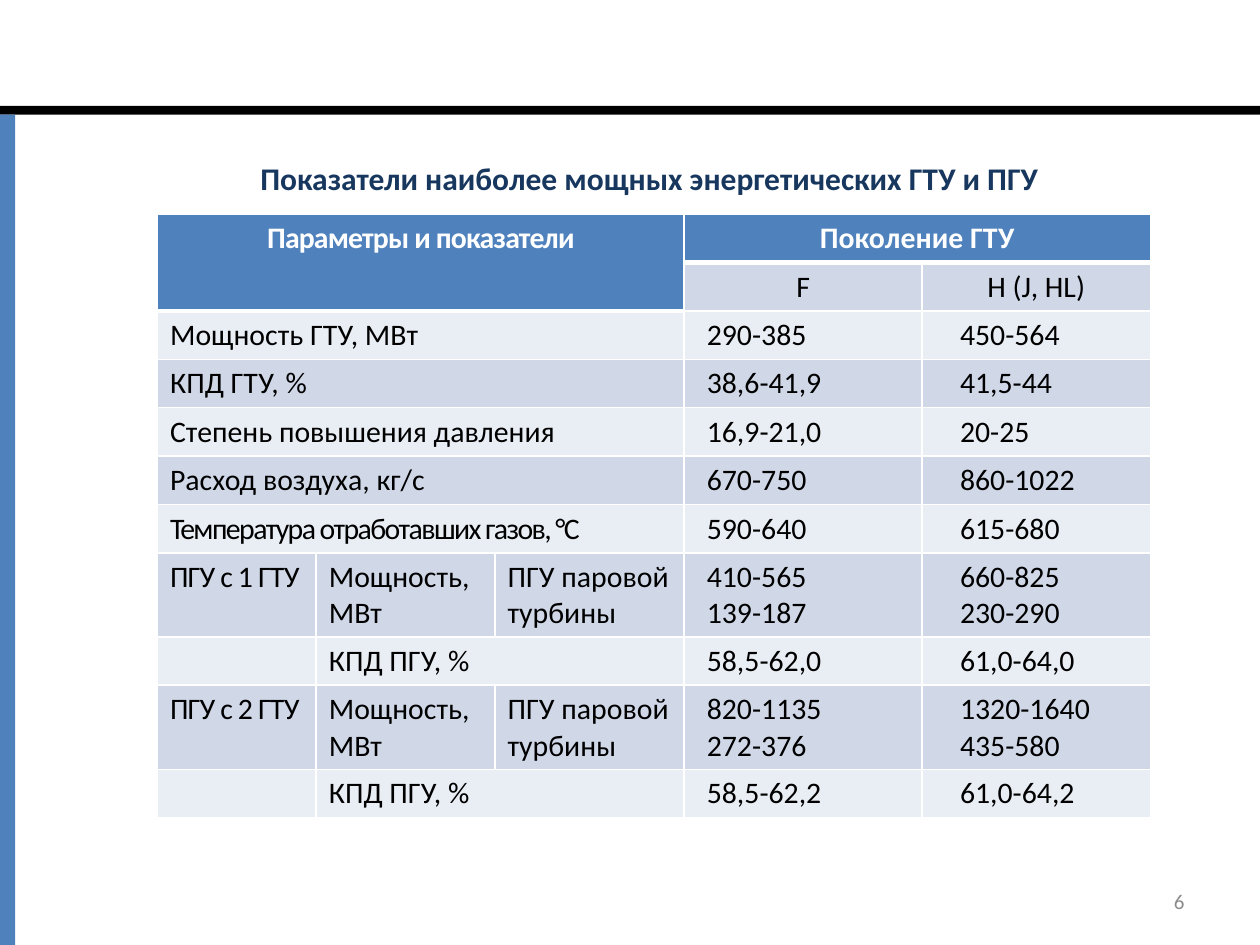
"""Build the slide that compares the most powerful gas turbine and combined-cycle units."""
import pptx
import pptx.dml.color
import pptx.enum.shapes
import pptx.enum.text
import pptx.oxml.ns
import pptx.util
from lxml import etree
from pptx.util import Inches

RGBColor = pptx.dml.color.RGBColor
ALIGN = pptx.enum.text.PP_ALIGN
ANCHOR = pptx.enum.text.MSO_ANCHOR

BLACK = RGBColor(0x00, 0x00, 0x00)
WHITE = RGBColor(0xFF, 0xFF, 0xFF)
BLUE = RGBColor(0x4F, 0x81, 0xBD)
NAVY = RGBColor(0x17, 0x37, 0x5E)
GRAY = RGBColor(0x8C, 0x8C, 0x8C)
DARK_BAND = RGBColor(0xD0, 0xD8, 0xE8)
LIGHT_BAND = RGBColor(0xE9, 0xED, 0xF4)

COLUMN_WIDTHS = (1.26, 1.42, 1.5, 1.89, 1.81)
ROW_HEIGHT = 0.38
TALL_ROW_HEIGHT = 0.66
F_COLUMN, H_COLUMN = 3, 4
VALUE_INDENTS = {F_COLUMN: 0.08, H_COLUMN: 0.2}

UNIT_CELLS = ("Мощность, МВт", "ПГУ паровой турбины")
ROWS = (
    (("Мощность ГТУ, МВт",), "290-385", "450-564"),
    (("КПД ГТУ, %",), "38,6-41,9", "41,5-44"),
    (("Степень повышения давления",), "16,9-21,0", "20-25"),
    (("Расход воздуха, кг/с",), "670-750", "860-1022"),
    (("Температура отработавших газов, °С",), "590-640", "615-680"),
    (("ПГУ с 1 ГТУ", *UNIT_CELLS), "410-565\n139-187", "660-825\n230-290"),
    (("", "КПД ПГУ, %"), "58,5-62,0", "61,0-64,0"),
    (("ПГУ с 2 ГТУ", *UNIT_CELLS), "820-1135\n272-376", "1320-1640\n435-580"),
    (("", "КПД ПГУ, %"), "58,5-62,2", "61,0-64,2"),
)
LETTER_SPACING = {
    "Параметры и показатели": -0.5,
    "Температура отработавших газов, °С": -0.9,
    "ПГУ с 1 ГТУ": -0.5,
    "ПГУ с 2 ГТУ": -0.5,
}


def style_paragraph(para, size, color, bold=False, align=ALIGN.LEFT):
    """Set the font and alignment of a paragraph."""
    para.alignment = align
    para.font.name = "Calibri"
    para.font.size = pptx.util.Pt(size)
    para.font.bold = bold
    para.font.color.rgb = color


def add_bar(page, left, top, width, height, color):
    """Add a plain rectangle."""
    bar = page.shapes.add_shape(
        pptx.enum.shapes.MSO_SHAPE.RECTANGLE,
        Inches(left), Inches(top), Inches(width), Inches(height))
    bar.shadow.inherit = False
    bar.fill.solid()
    bar.fill.fore_color.rgb = color
    bar.line.fill.background()


def add_text(page, left, top, width, height, text, **style):
    """Add a one-paragraph text box centred vertically and return the paragraph."""
    box = page.shapes.add_textbox(Inches(left), Inches(top), Inches(width), Inches(height))
    box.text_frame.word_wrap = True
    box.text_frame.vertical_anchor = ANCHOR.MIDDLE
    para = box.text_frame.paragraphs[0]
    para.text = text
    style_paragraph(para, **style)
    return para


def set_borders(cell, bottom_width):
    """Draw white borders around a cell, with a chosen width below."""
    properties = cell._tc.get_or_add_tcPr()
    widths = {"a:lnL": 1, "a:lnR": 1, "a:lnT": 1, "a:lnB": bottom_width}
    for index, (tag, width) in enumerate(widths.items()):
        line = etree.Element(pptx.oxml.ns.qn(tag), w=str(pptx.util.Pt(width)))
        fill = etree.SubElement(line, pptx.oxml.ns.qn("a:solidFill"))
        etree.SubElement(fill, pptx.oxml.ns.qn("a:srgbClr"), val=str(WHITE))
        properties.insert(index, line)


def fill_cell(cell, text, fill, color=BLACK, bold=False, align=ALIGN.LEFT, indent=0):
    """Write a table cell, one paragraph for each line of text."""
    cell.fill.solid()
    cell.fill.fore_color.rgb = fill
    cell.text = text
    for para in cell.text_frame.paragraphs:
        style_paragraph(para, 17, color, bold, align)
        if indent:
            para._p.get_or_add_pPr().set("indent", str(Inches(indent)))
        for span in para.runs:
            if text in LETTER_SPACING:
                span.font._element.set("spc", str(round(LETTER_SPACING[text] * 100)))


def add_header(table):
    """Fill the two header rows."""
    header = {"fill": BLUE, "color": WHITE, "bold": True, "align": ALIGN.CENTER}
    table.cell(0, 0).merge(table.cell(1, 2))
    table.cell(0, F_COLUMN).merge(table.cell(0, H_COLUMN))
    fill_cell(table.cell(0, 0), "Параметры и показатели", **header)
    fill_cell(table.cell(0, F_COLUMN), "Поколение ГТУ", **header)
    fill_cell(table.cell(1, F_COLUMN), "F", DARK_BAND, align=ALIGN.CENTER)
    fill_cell(table.cell(1, H_COLUMN), "H (J, HL)", DARK_BAND, align=ALIGN.CENTER)


def add_body_row(table, row, labels, values):
    """Fill one body row, stretching its last label up to the value columns."""
    fill = DARK_BAND if row % 2 else LIGHT_BAND
    last = len(labels) - 1
    if last < F_COLUMN - 1:
        table.cell(row, last).merge(table.cell(row, F_COLUMN - 1))
    for column, label in enumerate(labels):
        fill_cell(table.cell(row, column), label, fill)
    for (column, indent), value in zip(VALUE_INDENTS.items(), values):
        fill_cell(table.cell(row, column), value, fill, indent=indent)


def add_indicator_table(page):
    """Add the table of turbine indicators."""
    heights = [ROW_HEIGHT] * 2 + [
        TALL_ROW_HEIGHT if "\n" in f_value else ROW_HEIGHT for _, f_value, _ in ROWS]
    frame = page.shapes.add_table(
        len(heights), len(COLUMN_WIDTHS), Inches(1.25), Inches(1.7),
        Inches(sum(COLUMN_WIDTHS)), Inches(sum(heights)))
    table = frame.table
    for column, width in zip(table.columns, COLUMN_WIDTHS):
        column.width = Inches(width)
    for row, height in zip(table.rows, heights):
        row.height = Inches(height)
    add_header(table)
    for row, (labels, *values) in enumerate(ROWS, start=2):
        add_body_row(table, row, labels, values)
    for row in range(len(heights)):
        for column in range(len(COLUMN_WIDTHS)):
            is_header = row == 0 or (row == 1 and column < F_COLUMN)
            set_borders(table.cell(row, column), 3 if is_header else 1)


def main():
    """Build and save the deck."""
    deck = pptx.Presentation()
    deck.slide_width, deck.slide_height = Inches(10), Inches(7.5)
    page = deck.slides.add_slide(deck.slide_layouts[6])
    add_bar(page, 0, 0.84, 10, 0.07, BLACK)
    add_bar(page, 0, 0.91, 0.12, 6.59, BLUE)
    title = add_text(page, 1.22, 1.26, 7.87, 0.36,
                     "Показатели наиболее мощных энергетических ГТУ и ПГУ",
                     size=18, color=NAVY, bold=True, align=ALIGN.CENTER)
    title.line_spacing = pptx.util.Pt(18)
    add_text(page, 7.17, 6.95, 2.33, 0.4, "6", size=12, color=GRAY, align=ALIGN.RIGHT)
    add_indicator_table(page)
    deck.save("out.pptx")


if __name__ == "__main__":
    main()
